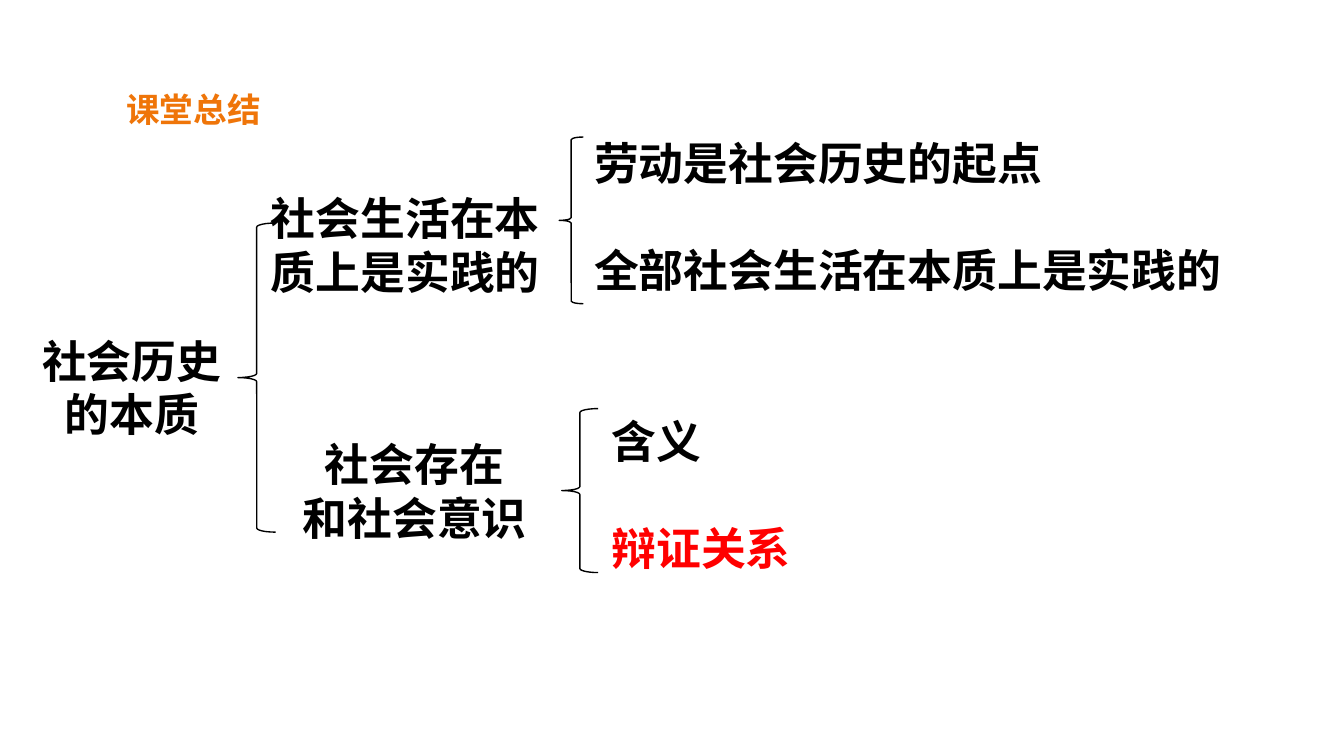
from pptx import Presentation
from pptx.dml.color import RGBColor
from pptx.enum.shapes import MSO_SHAPE
from pptx.enum.text import MSO_AUTO_SIZE, PP_ALIGN
from pptx.util import Pt

BLACK, RED, ORANGE = "000000", "FF0000", "EF7509"
LINE_GAP = 28.5

FRAME_FORMAT = {
    "auto_size": MSO_AUTO_SIZE.SHAPE_TO_FIT_TEXT,
    "margin_left": Pt(5.04),
    "margin_right": Pt(5.04),
    "margin_top": Pt(2.88),
    "margin_bottom": Pt(2.88),
}


def color(hex_value):
    return RGBColor.from_string(hex_value)


def add_label(slide, bounds, lines, size=24, align=PP_ALIGN.LEFT, gap=0, wrap=True):
    """Add bold text; lines holds (wording, colour) pairs, one per paragraph."""
    frame = slide.shapes.add_textbox(*map(Pt, bounds)).text_frame
    for attribute, value in {**FRAME_FORMAT, "word_wrap": wrap}.items():
        setattr(frame, attribute, value)
    for index, (wording, hex_value) in enumerate(lines):
        paragraph = frame.add_paragraph() if index else frame.paragraphs[0]
        paragraph.alignment = align
        if index and gap:
            paragraph.space_before = Pt(gap)
        run = paragraph.add_run()
        run.text = wording
        font_format = {"name": "Times New Roman", "size": Pt(size), "bold": True}
        for attribute, value in font_format.items():
            setattr(run.font, attribute, value)
        run.font.color.rgb = color(hex_value)


def add_brace(slide, bounds):
    brace = slide.shapes.add_shape(MSO_SHAPE.LEFT_BRACE, *map(Pt, bounds))
    brace.shadow.inherit = False
    brace.adjustments[0] = 0.11
    brace.fill.background()
    brace.line.color.rgb = color(BLACK)
    brace.line.width = Pt(0.75)


def main():
    presentation = Presentation()
    presentation.slide_width, presentation.slide_height = Pt(720), Pt(405)
    slide = presentation.slides.add_slide(presentation.slide_layouts[6])

    add_label(slide, (62.64, 44.64, 83.52, 27.36), [("课堂总结", ORANGE)],
              size=18, wrap=False)

    topics = [
        ((12.96, 175.68, 115.2, 63.36), ["社会历史的本质"]),
        ((147.6, 231.12, 149.04, 63.36), ["社会存在", "和社会意识"]),
        ((134.64, 99.36, 164.88, 63.36), ["社会生活在本质上是实践的"]),
    ]
    for bounds, wordings in topics:
        add_label(slide, bounds, [(wording, BLACK) for wording in wordings],
                  align=PP_ALIGN.CENTER)

    braces = [
        (127.44, 119.52, 20.16, 165.6),
        (299.52, 73.44, 12.96, 89.28),
        (300.96, 218.88, 19.44, 87.84),
    ]
    for bounds in braces:
        add_brace(slide, bounds)

    details = [
        ((322.56, 218.88, 354.24, 92.88), [("含义", BLACK), ("辩证关系", RED)]),
        ((313.2, 69.84, 363.6, 92.88),
         [("劳动是社会历史的起点", BLACK), ("全部社会生活在本质上是实践的", BLACK)]),
    ]
    for bounds, lines in details:
        add_label(slide, bounds, lines, gap=LINE_GAP)

    presentation.save("out.pptx")


if __name__ == "__main__":
    main()
